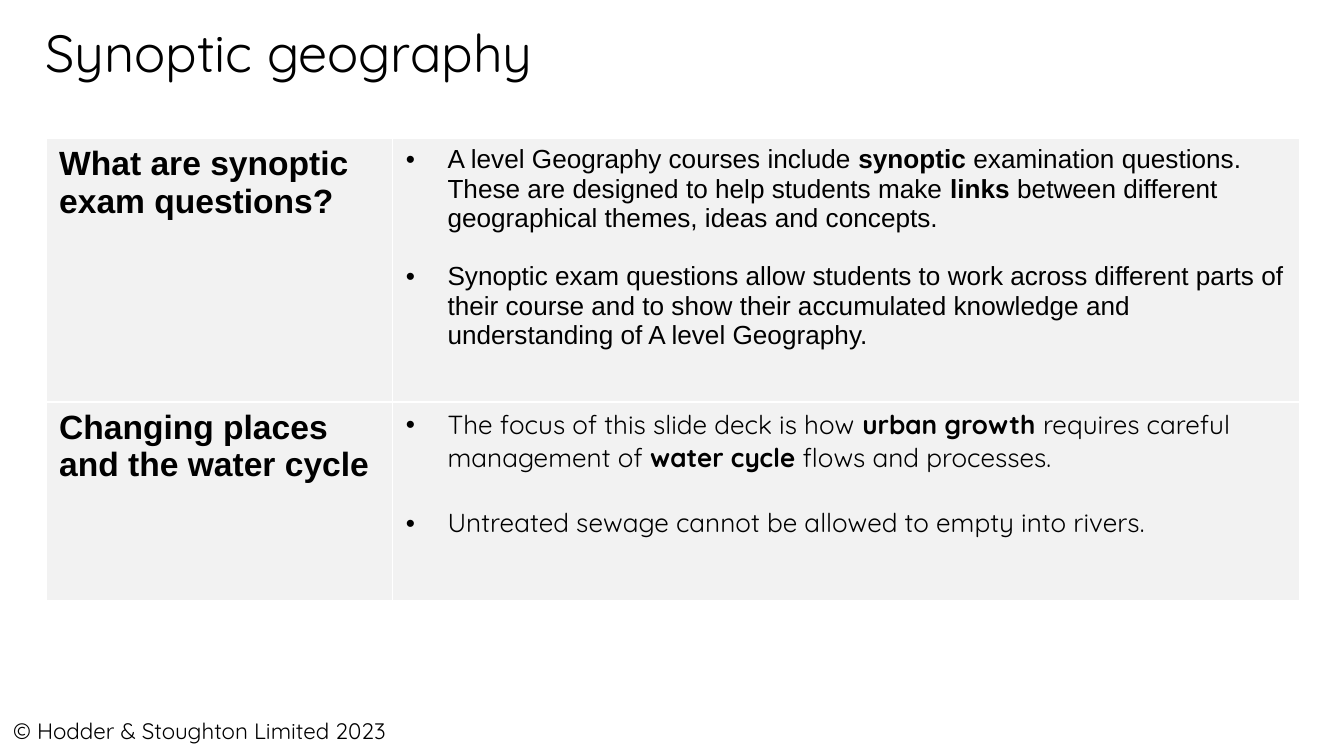
from lxml import etree
from pptx import Presentation
from pptx import util as u
from pptx.dml.color import RGBColor
from pptx.enum import text
from pptx.oxml import ns

COLORS = {"ink": "000000", "cell": "F2F2F2", "border": "FFFFFF"}
COLUMN_WIDTHS = (2.58, 6.75)
ROWS = (
    {
        "heading": "What are synoptic exam questions?",
        "font": "Arial",
        "height": 1.96,
        "gap": 15.5,
        "points": (
            "A level Geography courses include **synoptic** examination questions. "
            "These are designed to help students make **links** between different "
            "geographical themes, ideas and concepts.",
            "Synoptic exam questions allow students to work across different parts of "
            "their course and to show their accumulated knowledge and "
            "understanding of A level Geography.",
        ),
    },
    {
        "heading": "Changing places and the water cycle",
        "font": "Quicksand",
        "height": 1.48,
        "gap": 17.5,
        "points": (
            "The focus of this slide deck is how **urban growth **requires careful "
            "management of **water cycle **flows and processes.",
            "Untreated sewage cannot be allowed to empty into rivers.",
        ),
    },
)


def rgb(name):
    """Return the named palette colour."""
    return RGBColor.from_string(COLORS[name])


def add_element(parent, tag, **attributes):
    """Append a drawing element to its parent."""
    return etree.SubElement(parent, ns.qn(tag), attributes)


def write(paragraph, words, size=14, font="Arial", bold=False):
    """Write text in a paragraph, with **marked** parts in bold."""
    for index, part in enumerate(words.split("**")):
        if part:
            run = paragraph.add_run()
            run.text = part
            run.font.size = u.Pt(size)
            run.font.name = font
            run.font.bold = bold or index % 2 == 1
            run.font.color.rgb = rgb("ink")


def add_label(slide, words, left, top, width, height, inset=0.05, **style):
    """Add a text box holding one paragraph."""
    box = slide.shapes.add_textbox(*map(u.Inches, (left, top, width, height)))
    frame = box.text_frame
    frame.word_wrap = True
    frame.vertical_anchor = text.MSO_ANCHOR.TOP
    frame.margin_top = frame.margin_bottom = u.Inches(inset)
    write(frame.paragraphs[0], words, **style)


def add_bullet(paragraph):
    """Give a paragraph a hanging round bullet."""
    properties = paragraph._p.get_or_add_pPr()
    indent = u.Inches(0.31)
    properties.set("marL", str(indent))
    properties.set("indent", str(-indent))
    add_element(add_element(properties, "a:buClr"), "a:srgbClr", val=COLORS["ink"])
    add_element(properties, "a:buFont", typeface="Arial")
    add_element(properties, "a:buChar", char="•")


def style_cell(cell):
    """Give a cell its borders and fill."""
    properties = cell._tc.get_or_add_tcPr()
    for side in ("L", "R", "T", "B"):
        line = add_element(properties, f"a:ln{side}", w=str(u.Pt(1)))
        fill = add_element(line, "a:solidFill")
        add_element(fill, "a:srgbClr", val=COLORS["border"])
    cell.fill.solid()
    cell.fill.fore_color.rgb = rgb("cell")


def write_points(frame, points, font, gap):
    """Write bullet points separated by an even gap."""
    for index, point in enumerate(points):
        paragraph = frame.add_paragraph() if index else frame.paragraphs[0]
        add_bullet(paragraph)
        if index:
            paragraph.space_before = u.Pt(gap)
        write(paragraph, point, font=font)


def add_topics(slide):
    """Add the table of topics and their bullet points."""
    size = (sum(COLUMN_WIDTHS), sum(row["height"] for row in ROWS))
    table = slide.shapes.add_table(
        len(ROWS), len(COLUMN_WIDTHS), *map(u.Inches, (0.34, 1.03, *size))
    ).table
    table.first_row = table.horz_banding = False
    for column, width in zip(table.columns, COLUMN_WIDTHS):
        column.width = u.Inches(width)
    for index, row in enumerate(ROWS):
        table.rows[index].height = u.Inches(row["height"])
        heading, details = table.cell(index, 0), table.cell(index, 1)
        style_cell(heading)
        style_cell(details)
        write(heading.text_frame.paragraphs[0], row["heading"], size=18, bold=True)
        write_points(details.text_frame, row["points"], row["font"], row["gap"])


def main():
    """Build and save the slide."""
    deck = Presentation()
    deck.slide_width = u.Inches(10)
    deck.slide_height = deck.slide_width * 9 // 16
    slide = deck.slides.add_slide(deck.slide_layouts[6])
    add_label(slide, "Synoptic geography", 0.24, 0.05, 6.25, 0.97,
              inset=0.1, size=28, font="Quicksand")
    add_label(slide, "© Hodder & Stoughton Limited 2023", 0, 5.29, 3.56, 0.3,
              size=12, font="Quicksand")
    add_topics(slide)
    deck.save("out.pptx")


if __name__ == "__main__":
    main()
